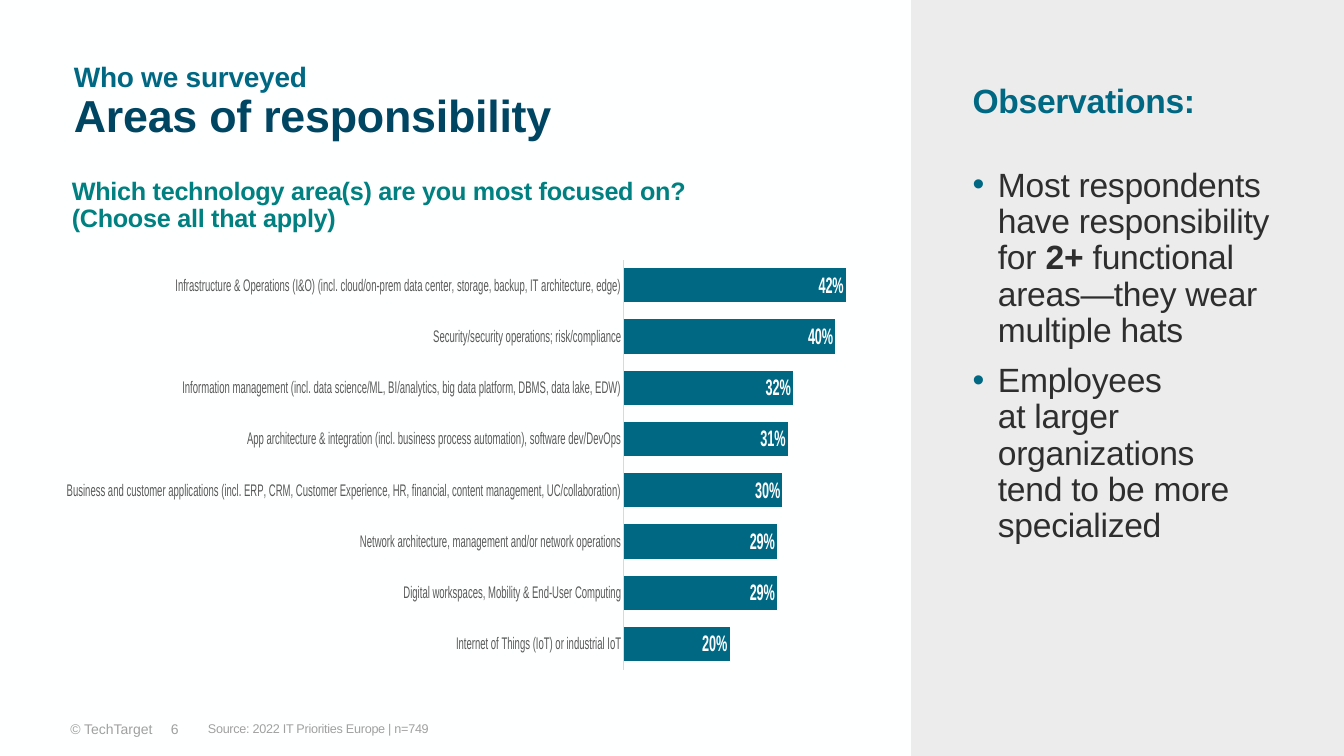
import copy
import pptx
import pptx.chart.data
import pptx.dml.color
import pptx.enum.chart
import pptx.enum.shapes
import pptx.enum.text
import pptx.oxml
import pptx.oxml.ns
import pptx.util

Cm, Pt = pptx.util.Cm, pptx.util.Pt
ALIGN = pptx.enum.text.PP_ALIGN
ANCHOR = pptx.enum.text.MSO_ANCHOR
NS = pptx.oxml.ns.nsdecls("a", "c")
FONT = "Arial"
TEAL, NAVY, GREEN = "006883", "004562", "008080"
WHITE, PALE, GREY, DARK = "FEFFFF", "ECECEC", "A0A0A0", "2E2E2E"


def paint(target, color):
    """Set a solid colour on a fill, or a colour on a font."""
    if hasattr(target, "solid"):
        target.solid()
        target.fore_color.rgb = pptx.dml.color.RGBColor.from_string(color)
    else:
        target.color.rgb = pptx.dml.color.RGBColor.from_string(color)


def style(para, size, color, bold=False, tight=True):
    """Format all runs and line breaks of a paragraph."""
    for run in para.runs:
        run.font.name, run.font.size, run.font.bold = FONT, Pt(size), bold
        paint(run.font, color)
        if tight:
            run.font._element.set("spc", "-20")
    for brk in para._p.findall(pptx.oxml.ns.qn("a:br")):
        brk.append(copy.deepcopy(para.runs[0].font._element))
    if tight:
        para.line_spacing = 0.9


# Slide
deck = pptx.Presentation()
deck.slide_width, deck.slide_height = Cm(33.87), Cm(19.05)
slide = deck.slides.add_slide(deck.slide_layouts[5])
shapes = slide.shapes
paint(slide.background.fill, WHITE)

# Side panel
panel = shapes.add_shape(pptx.enum.shapes.MSO_SHAPE.RECTANGLE,
                         Cm(22.96), 0, Cm(10.91), deck.slide_height)
panel.shadow.inherit = False
paint(panel.fill, PALE)
panel.line.fill.background()

# Title
title = shapes.title
title.left, title.top, title.width, title.height = Cm(1.73), Cm(1.32), Cm(20.04), Cm(2.54)
frame = title.text_frame
frame.text = "Who we surveyed\vAreas of responsibility"
frame.word_wrap = True
frame.auto_size = pptx.enum.text.MSO_AUTO_SIZE.NONE
frame.vertical_anchor = ANCHOR.MIDDLE
frame.margin_left = frame.margin_right = frame.margin_top = frame.margin_bottom = Cm(0.13)
para = frame.paragraphs[0]
para.alignment = ALIGN.LEFT
style(para, 20, TEAL, True)
para.runs[1].font.size = Pt(32)
paint(para.runs[1].font, NAVY)

# Single-paragraph texts: text, place, side and top margin, anchor, align, style
MID, TOP = ANCHOR.MIDDLE, ANCHOR.TOP
texts = [
    ("© TechTarget", (1.07, 18.03, 3.02, 0.69), (0.25, 0.13), TOP, ALIGN.RIGHT,
     (10, GREY, False, False)),
    ("6", (4.06, 18.03, 1.47, 0.69), (0.25, 0.13), TOP, ALIGN.LEFT, (10, GREY, False, False)),
    ("Source: 2022 IT Priorities Europe | n=749", (5.11, 18.08, 16.59, 0.91),
     (0.13, 0.13), TOP, ALIGN.LEFT, (9, GREY)),
    ("Which technology area(s) are you most focused on?\v(Choose all that apply)",
     (1.68, 4.24, 20.04, 1.91), (0.13, 0.13), MID, ALIGN.LEFT, (18, GREEN, True)),
    ("Observations:", (24.51, 1.32, 7.62, 2.54), (0, 0), MID, ALIGN.LEFT, (24, TEAL, True)),
]
for text, place, (side, edge), anchor, align, look in texts:
    frame = shapes.add_textbox(*map(Cm, place)).text_frame
    frame.text = text
    frame.word_wrap = True
    frame.vertical_anchor = anchor
    frame.margin_left = frame.margin_right = Cm(side)
    frame.margin_top = frame.margin_bottom = Cm(edge)
    frame.paragraphs[0].alignment = align
    style(frame.paragraphs[0], *look)

# Observations list: each point is a list of runs
points = [
    ["Most respondents have responsibility for ", "2+ ",
     "functional areas—they wear multiple hats"],
    ["Employees\vat larger organizations\vtend to be more specialized"],
]
frame = shapes.add_textbox(Cm(24.51), Cm(4.24), Cm(7.62), Cm(13.46)).text_frame
frame.word_wrap = True
frame.margin_left = frame.margin_right = frame.margin_top = frame.margin_bottom = 0
for i, parts in enumerate(points):
    para = frame.add_paragraph() if i else frame.paragraphs[0]
    para.text = parts[0]
    for part in parts[1:]:
        para.add_run().text = part
    props = para._p.get_or_add_pPr()
    props.set("marL", str(Cm(0.64)))
    props.set("indent", str(-Cm(0.64)))
    for xml in (f'<a:buClr {NS}><a:srgbClr val="{TEAL}"/></a:buClr>',
                f'<a:buFont {NS} typeface="{FONT}"/>',
                f'<a:buChar {NS} char="•"/>'):
        props.append(pptx.oxml.parse_xml(xml))
    style(para, 24, DARK)
    para.space_after = Pt(10)
frame.paragraphs[0].runs[1].font.bold = True

# Bar chart, listed from the bottom bar up
areas = [
    ("Internet of Things (IoT) or industrial IoT", 0.20),
    ("Digital workspaces, Mobility & End-User Computing", 0.29),
    ("Network architecture, management and/or network operations", 0.29),
    ("Business and customer applications (incl. ERP, CRM, Customer Experience, HR, "
     "financial, content management, UC/collaboration)", 0.30),
    ("App architecture & integration (incl. business process automation), "
     "software dev/DevOps", 0.31),
    ("Information management (incl. data science/ML, BI/analytics, big data platform, "
     "DBMS, data lake, EDW)", 0.32),
    ("Security/security operations; risk/compliance", 0.40),
    ("Infrastructure & Operations (I&O) (incl. cloud/on-prem data center, storage, "
     "backup, IT architecture, edge)", 0.42),
]
data = pptx.chart.data.CategoryChartData(number_format="0%")
data.categories = [name for name, share in areas]
data.add_series("Series 1", [share for name, share in areas])
chart = shapes.add_chart(pptx.enum.chart.XL_CHART_TYPE.BAR_CLUSTERED,
                         Cm(1.68), Cm(6.53), Cm(20.04), Cm(10.36), data).chart
chart.has_legend = chart.has_title = False
chart.font.name, chart.font.size = FONT, Pt(10)
paint(chart.font, "000000")

# Axes
names, scale = chart.category_axis, chart.value_axis
names.major_tick_mark = pptx.enum.chart.XL_TICK_MARK.NONE
names.tick_labels.font.name, names.tick_labels.font.size = FONT, Pt(12)
paint(names.tick_labels.font, "595959")
names.format.line.width = Pt(0.75)
paint(names.format.line.fill, "D9D9D9")
scale.minimum_scale, scale.maximum_scale = 0, 0.45
scale.has_major_gridlines = scale.visible = False

# Bars and labels
plot = chart.plots[0]
plot.gap_width, plot.vary_by_categories = 50, False
paint(plot.series[0].format.fill, TEAL)
plot.has_data_labels = True
labels = plot.data_labels
labels.show_value = True
labels.position = pptx.enum.chart.XL_LABEL_POSITION.INSIDE_END
labels.number_format, labels.number_format_is_linked = "0%", False
labels.font.name, labels.font.size, labels.font.bold = FONT, Pt(16), True
paint(labels.font, WHITE)

# Fixed plot area
spots = "".join(f'<c:{tag} val="{val}"/>' for tag, val in (
    ("layoutTarget", "inner"), ("xMode", "edge"), ("yMode", "edge"),
    ("x", 0.473), ("y", 0), ("w", 0.527), ("h", 1)))
area = chart._chartSpace.chart.plotArea
for old in area.findall(pptx.oxml.ns.qn("c:layout")):
    area.remove(old)
area.insert(0, pptx.oxml.parse_xml(
    f"<c:layout {NS}><c:manualLayout>{spots}</c:manualLayout></c:layout>"))

deck.save("out.pptx")
